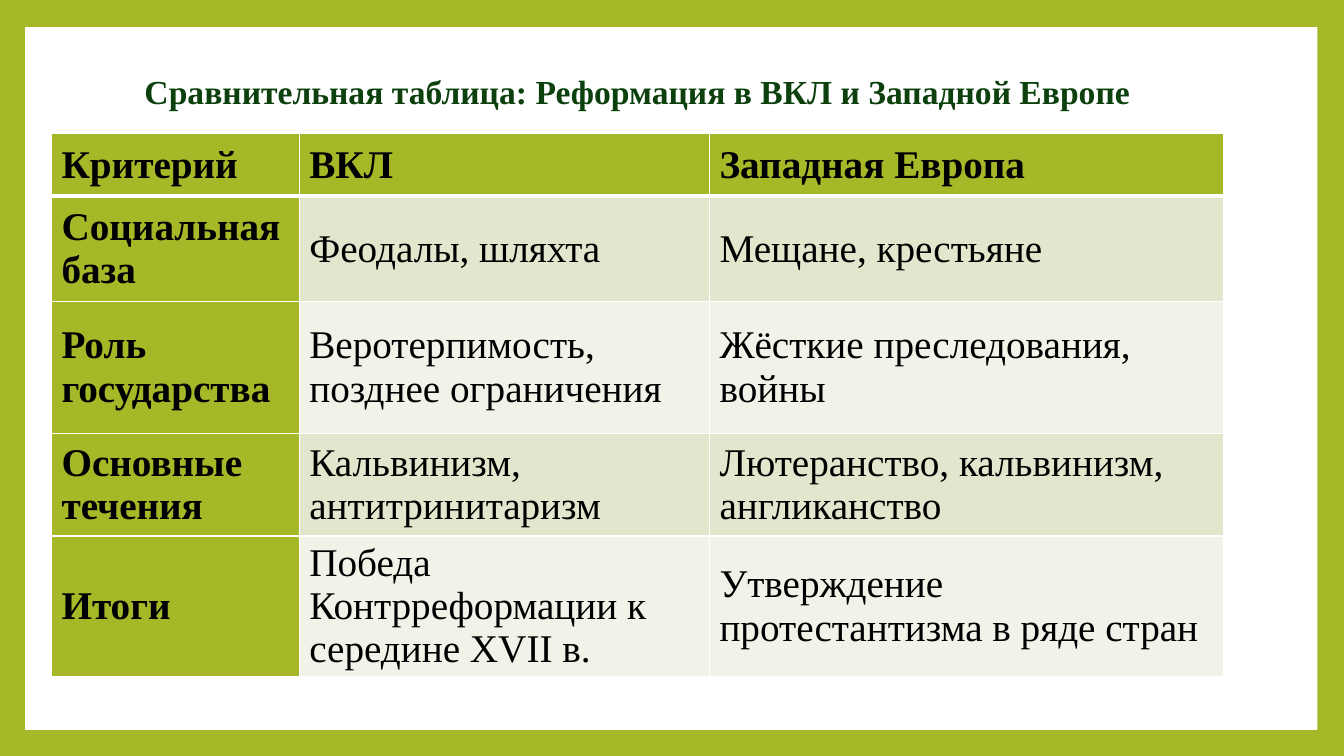
import dataclasses

import pptx
import pptx.dml.color
import pptx.enum.shapes
import pptx.enum.text
import pptx.oxml
import pptx.oxml.ns
import pptx.util

Pt = pptx.util.Pt


@dataclasses.dataclass
class Theme:
    font: str = "Times New Roman"
    green: str = "A6B727"
    white: str = "FFFFFF"
    dark: str = "0C400D"
    ink: str = "000000"
    bands: tuple = ("E1E6CD", "F1F3E8")
    head: int = 24
    body: int = 28
    thin: int = 1
    thick: int = 3


class Deck:
    def __init__(self, theme):
        self.theme = theme
        self.prs = pptx.Presentation()
        self.prs.slide_width = Pt(960)
        self.prs.slide_height = Pt(540)
        self.slide = self.prs.slides.add_slide(self.prs.slide_layouts[5])

    def paint(self, fill, color):
        fill.solid()
        fill.fore_color.rgb = pptx.dml.color.RGBColor.from_string(color)

    def add_text(self, para, text, size, color, bold):
        run = para.add_run()
        run.text = text
        font = run.font
        font.name, font.size, font.bold = self.theme.font, Pt(size), bold
        font.color.rgb = pptx.dml.color.RGBColor.from_string(color)

    def panel(self, box, color):
        rect = pptx.enum.shapes.MSO_SHAPE.RECTANGLE
        shape = self.slide.shapes.add_shape(rect, *map(Pt, box))
        shape.shadow.inherit = False
        shape.line.fill.background()
        self.paint(shape.fill, color)

    def title(self, box, text):
        shape = self.slide.shapes.title
        shape.left, shape.top, shape.width, shape.height = map(Pt, box)
        frame = shape.text_frame
        frame.word_wrap = True
        frame.auto_size = pptx.enum.text.MSO_AUTO_SIZE.NONE
        frame.vertical_anchor = pptx.enum.text.MSO_ANCHOR.MIDDLE
        frame.margin_left = Pt(13.2)
        para = frame.paragraphs[0]
        para.alignment = pptx.enum.text.PP_ALIGN.LEFT
        para.line_spacing = 0.9
        self.add_text(para, text, self.theme.head, self.theme.dark, True)

    def border(self, cell, side, width):
        line = pptx.oxml.parse_xml(
            f'<a:ln{side} {pptx.oxml.ns.nsdecls("a")} w="{Pt(width)}">'
            f'<a:solidFill><a:srgbClr val="{self.theme.white}"/></a:solidFill>'
            f'</a:ln{side}>')
        cell._tc.get_or_add_tcPr().append(line)

    def cell(self, cell, text, row, col):
        look = self.theme
        key = row == 0 or col == 0
        # Borders come before the fill in the cell properties
        for side in "LRTB":
            rule = (row, side) in ((0, "B"), (1, "T"))
            self.border(cell, side, look.thick if rule else look.thin)
        self.paint(cell.fill, look.green if key else look.bands[(row - 1) % 2])
        cell.vertical_anchor = pptx.enum.text.MSO_ANCHOR.MIDDLE
        para = cell.text_frame.paragraphs[0]
        self.add_text(para, text, look.body, look.ink, key)

    def table(self, left, top, cols, rows, data):
        box = map(Pt, (left, top, sum(cols), sum(rows)))
        grid = self.slide.shapes.add_table(len(rows), len(cols), *box).table
        grid.first_col = True
        for col, width in zip(grid.columns, cols):
            col.width = Pt(width)
        for row, height in zip(grid.rows, rows):
            row.height = Pt(height)
        for r, line in enumerate(data):
            for c, text in enumerate(line):
                self.cell(grid.cell(r, c), text, r, c)


DATA = (
    ("Критерий", "ВКЛ", "Западная Европа"),
    ("Социальная база", "Феодалы, шляхта", "Мещане, крестьяне"),
    ("Роль государства", "Веротерпимость, позднее ограничения",
     "Жёсткие преследования, войны"),
    ("Основные течения", "Кальвинизм, антитринитаризм",
     "Лютеранство, кальвинизм, англиканство"),
    ("Итоги", "Победа Контрреформации к середине XVII в.",
     "Утверждение протестантизма в ряде стран"),
)


def main():
    theme = Theme()
    deck = Deck(theme)

    # Green frame around a white panel
    deck.paint(deck.slide.background.fill, theme.green)
    deck.panel((18, 19.4, 923, 502), theme.white)

    # Title, raised above the panel
    deck.title((90, 48.2, 777.6, 37.4),
               "Сравнительная таблица: Реформация в ВКЛ и Западной Европе")
    tree = deck.slide.shapes._spTree
    tree.append(deck.slide.shapes.title._element)

    # Comparison table
    deck.table(36.8, 95.2, (177, 293, 367), (45, 75, 94.3, 73.5, 94.3), DATA)

    deck.prs.save("out.pptx")


if __name__ == "__main__":
    main()
